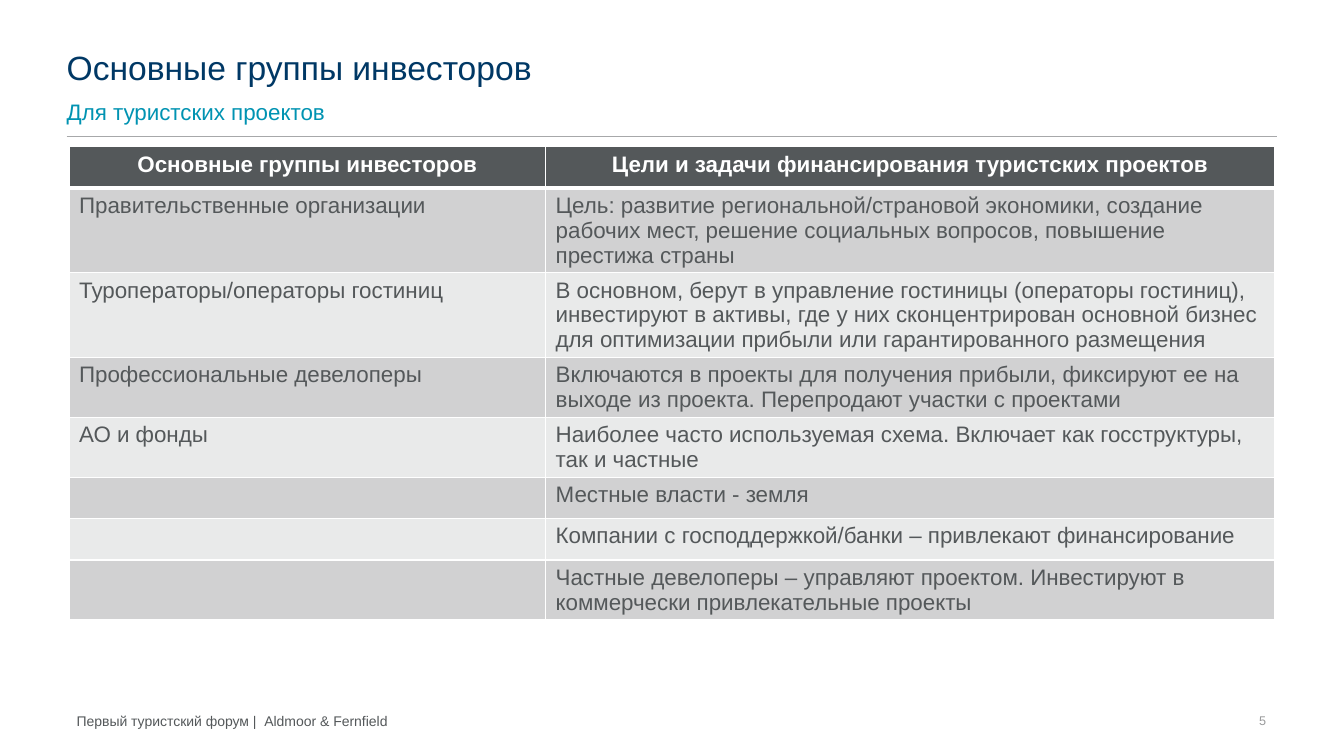
from lxml import etree
from pptx import Presentation
from pptx.dml.color import RGBColor
from pptx.enum.shapes import MSO_CONNECTOR
from pptx.enum.text import MSO_ANCHOR, MSO_AUTO_SIZE, PP_ALIGN
from pptx.oxml.ns import qn
from pptx.util import Cm, Pt

TITLE = "Основные группы инвесторов"
SUBTITLE = "Для туристских проектов"
FOOTER = "Первый туристский форум |  Aldmoor & Fernfield"
PAGE_NUMBER = "5"
HEADER = ("Основные группы инвесторов", "Цели и задачи финансирования туристских проектов")
INVESTORS = [
    ("Правительственные организации",
     "Цель: развитие региональной/страновой экономики, создание рабочих мест, "
     "решение социальных вопросов, повышение престижа страны"),
    ("Туроператоры/операторы гостиниц",
     "В основном, берут в управление гостиницы (операторы гостиниц), инвестируют в активы, "
     "где у них сконцентрирован основной бизнес для оптимизации прибыли "
     "или гарантированного размещения"),
    ("Профессиональные девелоперы",
     "Включаются в проекты для получения прибыли, фиксируют ее на выходе из проекта. "
     "Перепродают участки с проектами"),
    ("АО и фонды",
     "Наиболее часто используемая схема. Включает как госструктуры, так и частные"),
    ("", "Местные власти - земля"),
    ("", "Компании с господдержкой/банки – привлекают финансирование"),
    ("", "Частные девелоперы – управляют проектом. "
         "Инвестируют в коммерчески привлекательные проекты"),
]

FONT = "Arial"
NAVY = RGBColor(0x00, 0x38, 0x65)
TEAL = RGBColor(0x00, 0x93, 0xB2)
SLATE = RGBColor(0x54, 0x58, 0x5A)
RULE_GRAY = RGBColor(0xA7, 0xA8, 0xAA)
NUMBER_GRAY = RGBColor(0x99, 0x9A, 0x9B)
WHITE = RGBColor(0xFF, 0xFF, 0xFF)
BANDS = (RGBColor(0xD1, 0xD1, 0xD2), RGBColor(0xE9, 0xEA, 0xEA))

LEFT, CENTER, RIGHT = PP_ALIGN.LEFT, PP_ALIGN.CENTER, PP_ALIGN.RIGHT
TOP, MIDDLE = MSO_ANCHOR.TOP, MSO_ANCHOR.MIDDLE
NO_AUTOSIZE = MSO_AUTO_SIZE.NONE
STRAIGHT = MSO_CONNECTOR.STRAIGHT

MARGIN = Cm(1.68)
RULE_TOP, RULE_RIGHT = Cm(3.43), Cm(32.18)
TABLE_LEFT, TABLE_TOP = Cm(1.74), Cm(3.7)
COLUMN_WIDTHS = (Cm(12.01), Cm(18.37))
ROW_HEIGHT = Cm(1.04)


def write(text_frame, text, size, color, align=LEFT, bold=False):
    text_frame.text = text
    paragraph = text_frame.paragraphs[0]
    paragraph.alignment = align
    for run in paragraph.runs:
        run.font.name = FONT
        run.font.size = Pt(size)
        run.font.bold = bold
        run.font.color.rgb = color


def place(shape, left, top, width, height, anchor, inset=None):
    shape.left, shape.top, shape.width, shape.height = left, top, width, height
    frame = shape.text_frame
    frame.word_wrap = True
    frame.auto_size = NO_AUTOSIZE
    frame.vertical_anchor = anchor
    if inset is not None:
        frame.margin_left = frame.margin_right = inset
        frame.margin_top = frame.margin_bottom = inset
    return frame


def add_text_box(slide, left, top, width, height, anchor):
    return place(slide.shapes.add_textbox(left, top, width, height),
                 left, top, width, height, anchor)


def set_borders(cell, widths):
    properties = cell._tc.get_or_add_tcPr()
    for side, width in zip(("lnL", "lnR", "lnT", "lnB"), widths):
        border = etree.SubElement(properties, qn(f"a:{side}"), w=str(Pt(width)))
        fill = etree.SubElement(border, qn("a:solidFill"))
        etree.SubElement(fill, qn("a:srgbClr"), val=str(WHITE))


def add_rule(slide):
    rule = slide.shapes.add_connector(STRAIGHT, MARGIN, RULE_TOP, RULE_RIGHT, RULE_TOP)
    rule.line.color.rgb = RULE_GRAY
    rule.line.width = Pt(0.5)
    etree.SubElement(rule._element.spPr, qn("a:effectLst"))


def add_investor_table(slide):
    rows = [HEADER] + INVESTORS
    table = slide.shapes.add_table(
        len(rows), len(HEADER), TABLE_LEFT, TABLE_TOP,
        sum(COLUMN_WIDTHS), ROW_HEIGHT * len(rows)).table
    for column, width in zip(table.columns, COLUMN_WIDTHS):
        column.width = width
    for row_index, texts in enumerate(rows):
        is_header = row_index == 0
        table.rows[row_index].height = ROW_HEIGHT
        for column_index, text in enumerate(texts):
            cell = table.cell(row_index, column_index)
            set_borders(cell, (1, 1, 3 if row_index == 1 else 1, 3 if is_header else 1))
            cell.fill.solid()
            cell.fill.fore_color.rgb = SLATE if is_header else BANDS[(row_index - 1) % 2]
            write(cell.text_frame, text, 16, WHITE if is_header else SLATE,
                  CENTER if is_header else LEFT, is_header)


def main():
    presentation = Presentation()
    presentation.slide_width, presentation.slide_height = Cm(33.87), Cm(19.05)
    slide = presentation.slides.add_slide(presentation.slide_layouts[0])

    add_rule(slide)
    footer = add_text_box(slide, MARGIN, Cm(17.83), Cm(13.79), Cm(0.69), TOP)
    write(footer, FOOTER, 10, SLATE)
    title = place(slide.shapes.title, MARGIN, Cm(1.17), Cm(22.89), Cm(1.04), TOP, 0)
    write(title, TITLE, 24, NAVY)
    subtitle = place(slide.placeholders[1], MARGIN, Cm(2.24), Cm(22.89), Cm(1.14), MIDDLE, 0)
    write(subtitle, SUBTITLE, 16, TEAL)
    number = add_text_box(slide, Cm(29.92), Cm(17.65), Cm(2.24), Cm(1.02), MIDDLE)
    write(number, PAGE_NUMBER, 9, NUMBER_GRAY, RIGHT)
    add_investor_table(slide)

    presentation.save("out.pptx")


if __name__ == "__main__":
    main()
